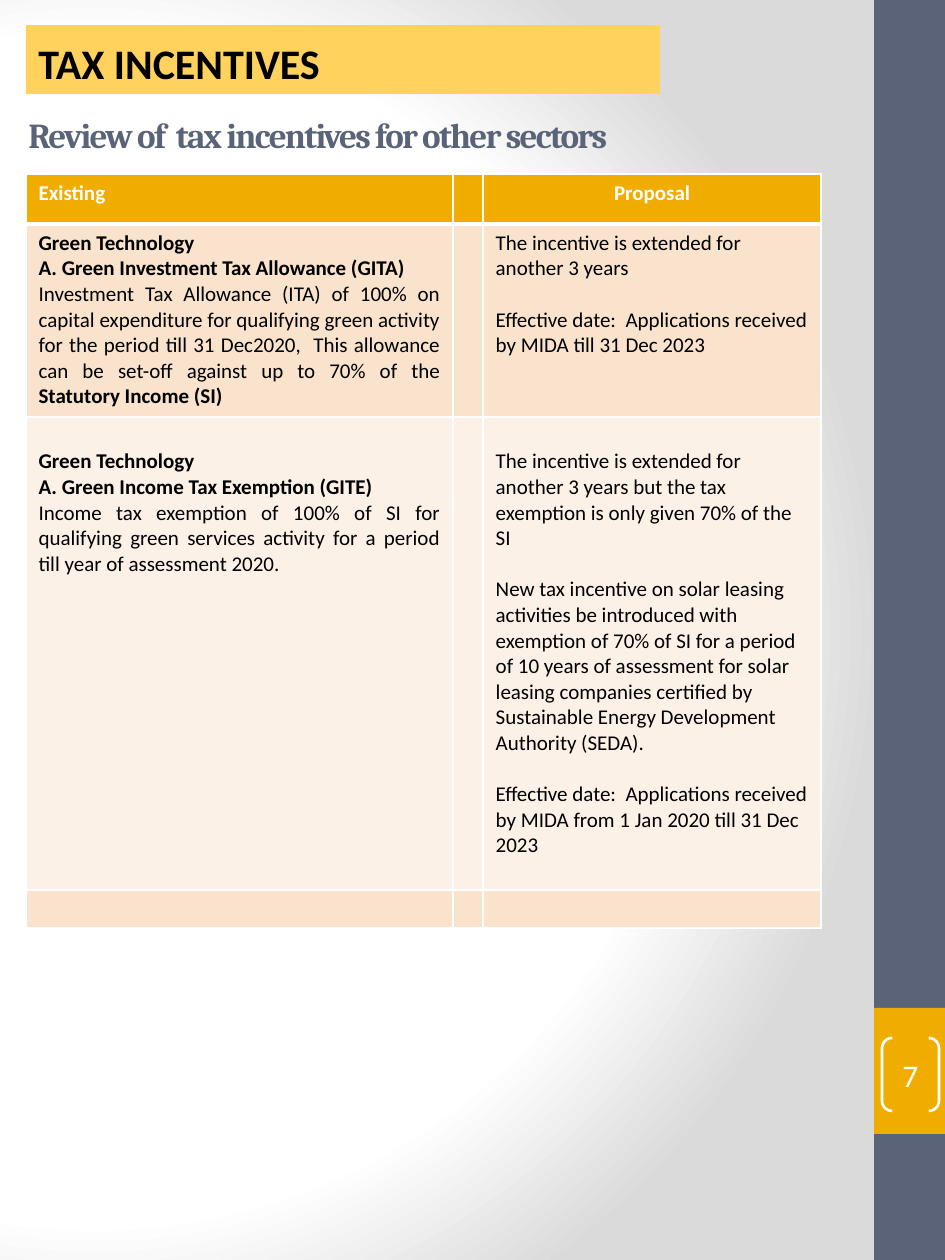
import pptx
import pptx.util
import pptx.dml.color
import pptx.enum.shapes
import pptx.enum.text
import pptx.oxml
import pptx.oxml.ns

RGBColor = pptx.dml.color.RGBColor
Pt = pptx.util.Pt
ALIGN = pptx.enum.text.PP_ALIGN
ANCHOR = pptx.enum.text.MSO_ANCHOR
SHAPE = pptx.enum.shapes.MSO_SHAPE

WHITE = RGBColor(0xFF, 0xFF, 0xFF)
BLACK = RGBColor(0, 0, 0)
SLATE = RGBColor(0x5A, 0x63, 0x78)
AMBER = RGBColor(0xF0, 0xAD, 0x00)
YELLOW = RGBColor(0xFF, 0xD2, 0x5D)
PEACH = RGBColor(0xF9, 0xE3, 0xCC)
CREAM = RGBColor(0xFC, 0xF1, 0xE7)

LINE_GAP = 14.65  # one 12 pt line, in points
NS = pptx.oxml.ns.nsdecls("a")

# Each paragraph is a list of (text, bold) runs
GITA = [
    [("Green Technology", True)],
    [("A. Green Investment Tax Allowance (GITA)", True)],
    [("Investment Tax Allowance (ITA) of 100% on capital expenditure for qualifying "
      "green activity for the period till 31 Dec2020,  This allowance can be set-off "
      "against up to 70% of the ", False), ("Statutory Income (SI)", True)],
]
GITA_PROPOSAL = [
    [("The incentive is extended for another 3 years", False)],
    [("Effective date:  Applications received by MIDA till 31 Dec 2023", False)],
]
GITE = [
    [("Green Technology", True)],
    [("A. Green Income Tax Exemption (GITE)", True)],
    [("Income tax exemption of 100% of SI for qualifying green services activity "
      "for a period till year of assessment 2020.", False)],
]
GITE_PROPOSAL = [
    [("The incentive is extended for another 3 years but the tax exemption is only "
      "given 70% of the SI", False)],
    [("New tax incentive on solar leasing activities be introduced with exemption of "
      "70% of SI for a period of 10 years of assessment for solar leasing companies "
      "certified by Sustainable Energy Development Authority (SEDA).", False)],
    [("Effective date:  Applications received by MIDA from 1 Jan 2020 till 31 Dec 2023",
      False)],
]
HEADER = ([[("Existing", True)]], [], [[("Proposal", True)]])
ROWS = [HEADER, (GITA, [], GITA_PROPOSAL), (GITE, [], GITE_PROPOSAL), ([], [], [])]
FILLS = [AMBER, PEACH, CREAM, PEACH]
COL_WIDTHS = [427, 30, 338]
ROW_HEIGHTS = [50, 193, 473, 38]


def px(n):
    return pptx.util.Emu(round(n * 914400 / 126))


def style(r, size, color, bold=False, font="Calibri"):
    r.font.size, r.font.bold, r.font.name = Pt(size), bold, font
    r.font.color.rgb = color


def add_block(s, x, y, w, h, fill=None, kind=SHAPE.RECTANGLE):
    sp = s.shapes.add_shape(kind, px(x), px(y), px(w), px(h))
    sp.shadow.inherit = False
    sp.line.fill.background()
    if fill is None:
        sp.fill.background()
    else:
        sp.fill.solid()
        sp.fill.fore_color.rgb = fill
    return sp


def add_background(s):
    s.background.fill.solid()
    bg = s.element.find(".//" + pptx.oxml.ns.qn("p:bgPr"))
    stops = "".join(f'<a:gs pos="{pos}"><a:srgbClr val="{c}"/></a:gs>'
                    for pos, c in ((0, "FFFFFF"), (75000, "FFFFFF"), (100000, "DADADA")))
    bg.replace(bg[0], pptx.oxml.parse_xml(
        f'<a:gradFill {NS} rotWithShape="1"><a:gsLst>{stops}</a:gsLst><a:path path="circle">'
        '<a:fillToRect l="20000" t="50000" r="100000" b="50000"/></a:path></a:gradFill>'))


def add_sidebar(s, x, y, w, h):
    add_block(s, x, y, w, h, SLATE)
    add_block(s, x, y + 1008, w, 126, AMBER)
    # Page number in brackets
    sp = add_block(s, x + 8, y + 1038, 57, 73, kind=SHAPE.DOUBLE_BRACKET)
    sp.adjustments[0] = 0.18
    sp.line.color.rgb, sp.line.width = WHITE, Pt(1.5)
    tf = sp.text_frame
    tf.margin_left = tf.margin_right = tf.margin_top = tf.margin_bottom = 0
    tf.vertical_anchor = ANCHOR.MIDDLE
    tf.text = "7"
    tf.paragraphs[0].alignment = ALIGN.CENTER
    style(tf.paragraphs[0].runs[0], 18, WHITE)


def add_heading(s, x, y, w, h):
    # Banner
    tf = add_block(s, x, y, w, 69, YELLOW).text_frame
    tf.vertical_anchor = ANCHOR.BOTTOM
    tf.text = "TAX INCENTIVES"
    tf.paragraphs[0].alignment = ALIGN.LEFT
    style(tf.paragraphs[0].runs[0], 24, BLACK, True)
    # Title
    tf = s.shapes.add_textbox(px(x - 10), px(y + 82), px(833), px(h - 82)).text_frame
    tf.word_wrap = True
    tf.text = "Review of  tax incentives for other sectors"
    r = tf.paragraphs[0].runs[0]
    style(r, 20, SLATE, True, "Cambria")
    r.font._element.set("spc", "-100")


def add_borders(cell, bottom):
    tcPr = cell._tc.get_or_add_tcPr()
    for i, (side, width) in enumerate((("L", 1), ("R", 1), ("T", 1), ("B", bottom))):
        tcPr.insert(i, pptx.oxml.parse_xml(
            f'<a:ln{side} {NS} w="{Pt(width)}"><a:solidFill><a:srgbClr val="{WHITE}"/>'
            f'</a:solidFill></a:ln{side}>'))


def fill_cell(cell, paragraphs, color, align, gap):
    tf = cell.text_frame
    if not paragraphs:
        tf.paragraphs[0]._p.get_or_add_endParaRPr().set("sz", "1200")
    for i, runs in enumerate(paragraphs):
        p = tf.add_paragraph() if i else tf.paragraphs[0]
        p.alignment = align
        if i and gap:
            p.space_before = Pt(gap)
        for text, bold in runs:
            r = p.add_run()
            r.text = text
            style(r, 12, color, bold)


def add_incentive_table(s, x, y, w, h):
    table = s.shapes.add_table(len(ROWS), 3, px(x), px(y), px(w), px(h)).table
    table.horz_banding = False
    for col, width in zip(table.columns, COL_WIDTHS):
        col.width = px(width)
    for i, (row, height) in enumerate(zip(table.rows, ROW_HEIGHTS)):
        row.height = px(height)
        for j, cell in enumerate(row.cells):
            cell.fill.solid()
            cell.fill.fore_color.rgb = FILLS[i]
            add_borders(cell, 1 if i else 3)
            if i == 0:
                color, align = WHITE, ALIGN.CENTER if j == 2 else ALIGN.LEFT
            else:
                color, align = BLACK, ALIGN.LEFT if j == 2 else ALIGN.JUSTIFY
            if ROWS[i] [j] and i == 2:
                cell.margin_top = px(32)
            fill_cell(cell, ROWS[i][j], color, align, LINE_GAP if j == 2 else 0)


def main():
    prs = pptx.Presentation()
    prs.slide_width, prs.slide_height = px(945), px(1260)
    s = prs.slides.add_slide(prs.slide_layouts[6])
    add_background(s)
    add_sidebar(s, 874, 0, 71, 1260)
    add_heading(s, 26, 25, 634, 136)
    add_incentive_table(s, 26, 174, sum(COL_WIDTHS), sum(ROW_HEIGHTS))
    prs.save("out.pptx")


if __name__ == "__main__":
    main()
